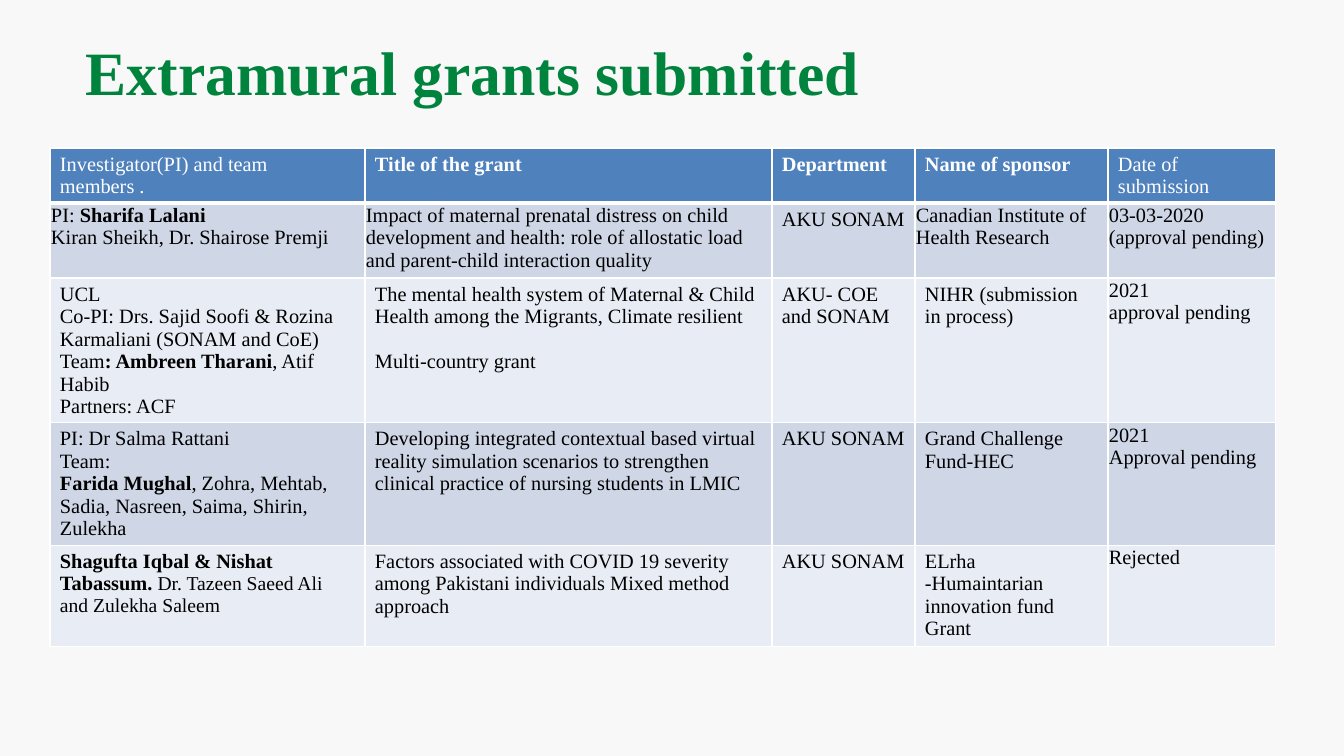
from dataclasses import dataclass

from lxml.etree import SubElement
from pptx import Presentation
from pptx.dml.color import RGBColor
from pptx.enum.text import MSO_ANCHOR
from pptx.oxml.ns import qn
from pptx.util import Emu, Pt

FONT = "Times New Roman"
WHITE, BLACK, GREEN = "FFFFFF", "000000", "00843D"
HEADER_FILL, BAND_FILLS = "4F81BD", ("CFD7E7", "E8ECF4")
TEXT_SIZE = 14.5
BLANK_LINE = 16
PADDED, TIGHT = (10, 5, 10, 5), (1, 1, 1, 0)
COLUMN_WIDTHS = (315, 407, 143, 193, 168)
ROW_HEIGHTS = (52, 75, 145, 122, 101)


@dataclass(frozen=True)
class Entry:
    """Cell text: a newline starts a paragraph, ** switches bold on and off."""
    text: str
    insets: tuple[int, int, int, int] = PADDED
    regular_size: float = TEXT_SIZE
    last_space_before: float = 0


HEADER = (
    Entry("Investigator(PI) and team members ."),
    Entry("**Title of the grant**"),
    Entry("**Department**"),
    Entry("**Name of sponsor**"),
    Entry("Date of submission"),
)
GRANTS = (
    (
        Entry("PI: **Sharifa Lalani**\nKiran Sheikh, Dr. Shairose Premji", TIGHT),
        Entry("Impact of maternal prenatal distress on child development and health: "
              "role of allostatic load and parent-child interaction quality", TIGHT),
        Entry("AKU SONAM"),
        Entry("Canadian Institute of Health Research", TIGHT),
        Entry("03-03-2020\n(approval pending)", TIGHT),
    ),
    (
        Entry("UCL\nCo-PI: Drs. Sajid Soofi & Rozina Karmaliani (SONAM and CoE)\n"
              "Team**: Ambreen Tharani**, Atif Habib\nPartners: ACF"),
        Entry("The mental health system of Maternal & Child Health among the Migrants, "
              "Climate resilient\nMulti-country grant", last_space_before=BLANK_LINE),
        Entry("AKU- COE and SONAM"),
        Entry("NIHR (submission in process)"),
        Entry("2021\napproval pending", TIGHT),
    ),
    (
        Entry("PI: Dr Salma Rattani\nTeam:\n"
              "**Farida Mughal**, Zohra, Mehtab, Sadia, Nasreen, Saima, Shirin, Zulekha"),
        Entry("Developing integrated contextual based virtual reality simulation scenarios "
              "to strengthen clinical practice of nursing students in LMIC"),
        Entry("AKU SONAM"),
        Entry("Grand Challenge Fund-HEC"),
        Entry("2021\nApproval pending", TIGHT),
    ),
    (
        Entry("**Shagufta Iqbal & Nishat Tabassum. **Dr. Tazeen Saeed Ali and Zulekha Saleem",
              regular_size=14),
        Entry("Factors associated with COVID 19 severity among Pakistani individuals "
              "Mixed method approach"),
        Entry("AKU SONAM"),
        Entry("ELrha -Humaintarian innovation fund Grant"),
        Entry("Rejected", TIGHT),
    ),
)


def px(length: int) -> Emu:
    return Emu(round(length * 914400 / 100.8))


def colour(value: str) -> RGBColor:
    return RGBColor.from_string(value)


def set_insets(target, insets: tuple[int, int, int, int]) -> None:
    (target.margin_left, target.margin_top,
     target.margin_right, target.margin_bottom) = map(px, insets)


def write(frame, text: str, *, color: str, size: float = TEXT_SIZE,
          regular_size: float = TEXT_SIZE, last_space_before: float = 0) -> None:
    """Fill a frame with marked text; bold spans take size, others regular_size."""
    frame.word_wrap = True
    for index, line in enumerate(text.split("\n")):
        para = frame.add_paragraph() if index else frame.paragraphs[0]
        for position, piece in enumerate(line.split("**")):
            if not piece:
                continue
            bold = position % 2 == 1
            span = para.add_run()
            span.text = piece
            span.font.name = FONT
            span.font.size = Pt(size if bold else regular_size)
            span.font.bold = bold
            span.font.color.rgb = colour(color)
    if last_space_before:
        para.space_before = Pt(last_space_before)


def add_borders(cell, top: int, bottom: int) -> None:
    properties = cell._tc.get_or_add_tcPr()
    for side, width in (("L", 1), ("R", 1), ("T", top), ("B", bottom)):
        line = SubElement(properties, qn(f"a:ln{side}"), w=str(Pt(width)))
        fill = SubElement(line, qn("a:solidFill"))
        SubElement(fill, qn("a:srgbClr"), val=WHITE)


def add_title(page) -> None:
    box = page.shapes.add_textbox(px(76), px(8), px(1210), px(126))
    frame = box.text_frame
    frame.vertical_anchor = MSO_ANCHOR.MIDDLE
    set_insets(frame, PADDED)
    write(frame, "**Extramural grants submitted**", color=GREEN, size=44)


def add_grants_table(page) -> None:
    table = page.shapes.add_table(
        len(ROW_HEIGHTS), len(COLUMN_WIDTHS), px(50), px(148),
        px(sum(COLUMN_WIDTHS)), px(sum(ROW_HEIGHTS))).table
    for column, width in zip(table.columns, COLUMN_WIDTHS):
        column.width = px(width)
    for row, height in zip(table.rows, ROW_HEIGHTS):
        row.height = px(height)

    for row_index, entries in enumerate((HEADER, *GRANTS)):
        is_header = row_index == 0
        background = HEADER_FILL if is_header else BAND_FILLS[(row_index - 1) % 2]
        for column_index, entry in enumerate(entries):
            cell = table.cell(row_index, column_index)
            set_insets(cell, entry.insets)
            add_borders(cell, top=3 if row_index == 1 else 1, bottom=3 if is_header else 1)
            cell.fill.solid()
            cell.fill.fore_color.rgb = colour(background)
            write(cell.text_frame, entry.text, color=WHITE if is_header else BLACK,
                  regular_size=entry.regular_size,
                  last_space_before=entry.last_space_before)


def main() -> None:
    deck = Presentation()
    deck.slide_width, deck.slide_height = px(1344), px(756)
    page = deck.slides.add_slide(deck.slide_layouts[6])
    page.background.fill.solid()
    page.background.fill.fore_color.rgb = colour("F8F8F8")
    add_grants_table(page)
    add_title(page)
    deck.save("out.pptx")


if __name__ == "__main__":
    main()
